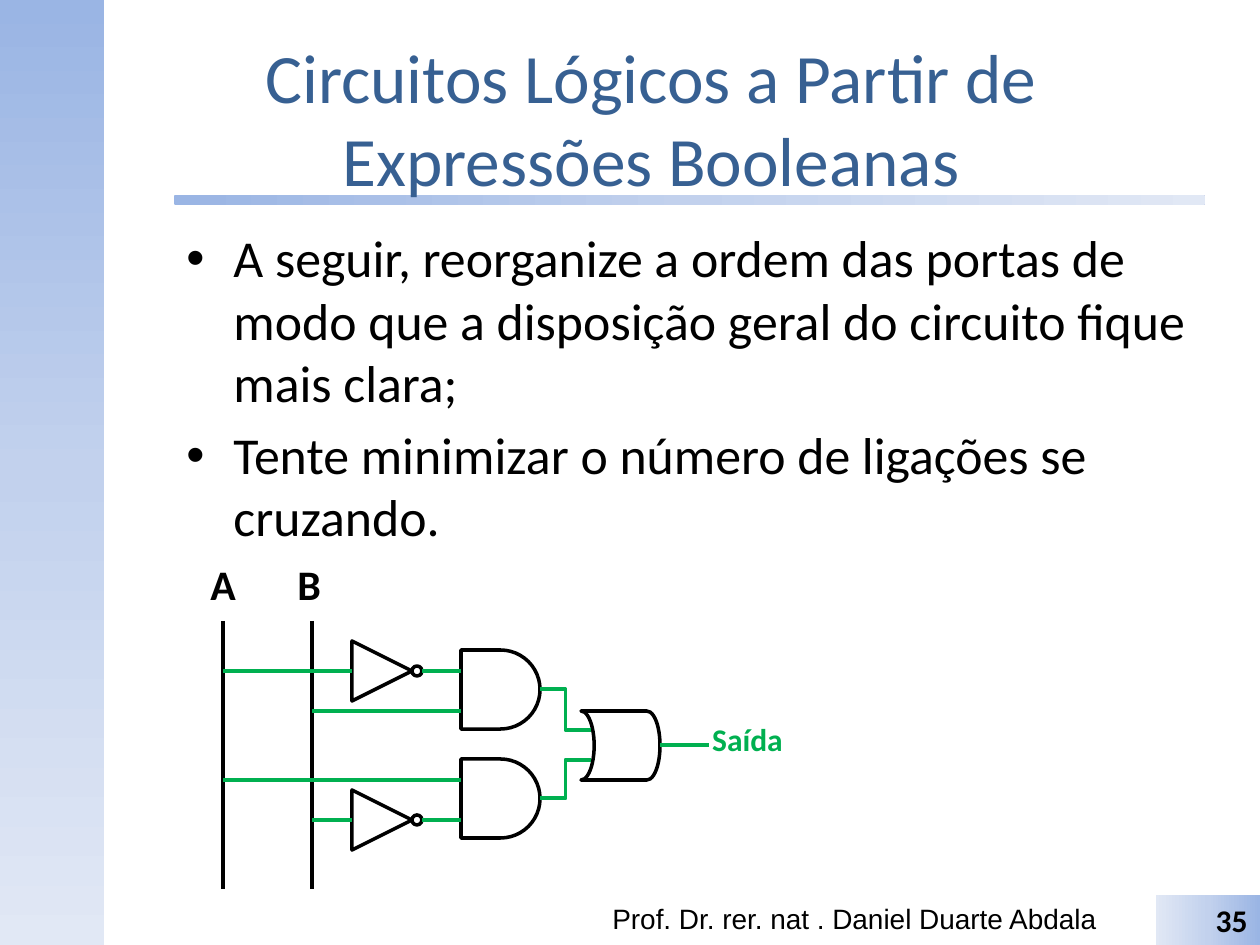
from dataclasses import dataclass

from lxml import etree
from pptx import Presentation
from pptx.dml.color import RGBColor
from pptx.enum.shapes import MSO_CONNECTOR, MSO_SHAPE
from pptx.enum.text import MSO_ANCHOR, PP_ALIGN
from pptx.oxml.ns import qn
from pptx.util import Pt

PX = 914400 / 126
STRAIGHT, ELBOW = MSO_CONNECTOR.STRAIGHT, MSO_CONNECTOR.ELBOW
RECT, ROUNDED, OVAL = MSO_SHAPE.RECTANGLE, MSO_SHAPE.ROUNDED_RECTANGLE, MSO_SHAPE.OVAL
AND_GATE = MSO_SHAPE.FLOWCHART_DELAY
OR_GATE = MSO_SHAPE.FLOWCHART_STORED_DATA
TRIANGLE = MSO_SHAPE.FLOWCHART_MERGE
LEFT, CENTER, RIGHT = PP_ALIGN.LEFT, PP_ALIGN.CENTER, PP_ALIGN.RIGHT
TOP, MIDDLE = MSO_ANCHOR.TOP, MSO_ANCHOR.MIDDLE


@dataclass(frozen=True)
class Theme:
    ink: str = "000000"
    title: str = "376092"
    signal: str = "00B050"
    gradient: tuple = ((0, "9AB5E4"), (50, "C2D1ED"), (100, "E1E8F5"))
    font: str = "Calibri"
    footer_font: str = "Arial"
    title_size: float = 39.6
    body_size: float = 29.6
    input_size: int = 24
    label_size: int = 18
    footer_size: int = 16
    gate_line: int = 2
    wire_line: float = 2.25


def emu(*lengths):
    return [round(length * PX) for length in lengths]


class CircuitSlide:
    def __init__(self, slide, theme):
        self.slide = slide
        self.theme = theme

    def gradient_box(self, kind, box, angle):
        """Angle runs counter-clockwise, as python-pptx counts it."""
        shape = self.slide.shapes.add_shape(kind, *emu(*box))
        shape.shadow.inherit = False
        shape.line.fill.background()
        shape.fill.gradient()
        shape.fill.gradient_angle = angle
        stops = next(shape.element.iter(qn("a:gsLst")))
        for stop in list(stops):
            stops.remove(stop)
        for position, color in self.theme.gradient:
            stop = etree.SubElement(stops, qn("a:gs"), pos=str(position * 1000))
            etree.SubElement(stop, qn("a:srgbClr"), val=color)
        return shape

    def fill_text(self, frame, lines, size, color=None, font=None, bold=False,
                  align=LEFT, anchor=TOP, wrap=True):
        frame.word_wrap = wrap
        frame.vertical_anchor = anchor
        for index, line in enumerate(lines):
            paragraph = frame.add_paragraph() if index else frame.paragraphs[0]
            paragraph.text = line
            paragraph.alignment = align
            paragraph.font.size = Pt(size)
            paragraph.font.name = font or self.theme.font
            paragraph.font.bold = bold
            paragraph.font.color.rgb = RGBColor.from_string(color or self.theme.ink)

    def text(self, box, line, size, **style):
        frame = self.slide.shapes.add_textbox(*emu(*box)).text_frame
        self.fill_text(frame, [line], size, **style)

    def bullets(self, box, lines, size, indent):
        frame = self.slide.shapes.add_textbox(*emu(*box)).text_frame
        self.fill_text(frame, lines, size)
        hang = emu(indent)[0]
        for paragraph in frame.paragraphs:
            paragraph.space_before = Pt(round(size * 0.2, 1))
            properties = paragraph._p.get_or_add_pPr()
            properties.set("marL", str(hang))
            properties.set("indent", str(-hang))
            bullet_font = etree.Element(qn("a:buFont"), typeface="Arial")
            bullet = etree.Element(qn("a:buChar"), char="•")
            run_style = properties.find(qn("a:defRPr"))
            run_style.addprevious(bullet_font)
            run_style.addprevious(bullet)

    def gate(self, kind, box, rotation=0, parent=None):
        shape = (parent or self.slide).shapes.add_shape(kind, *emu(*box))
        shape.shadow.inherit = False
        shape.rotation = rotation
        shape.fill.background()
        shape.line.color.rgb = RGBColor.from_string(self.theme.ink)
        shape.line.width = Pt(self.theme.gate_line)

    def inverter(self, left, middle, side, bubble):
        group = self.slide.shapes.add_group_shape()
        self.gate(TRIANGLE, (left, middle - side / 2, side, side), 270, group)
        self.gate(OVAL, (left + side, middle - bubble / 2, bubble, bubble), 0, group)

    def wire(self, start, end, color=None, kind=STRAIGHT):
        wire = self.slide.shapes.add_connector(kind, *emu(*start, *end))
        wire.line.color.rgb = RGBColor.from_string(color or self.theme.signal)
        wire.line.width = Pt(self.theme.wire_line)
        etree.SubElement(wire._element.spPr, qn("a:effectLst"))


def draw_frame(page):
    theme = page.theme
    page.gradient_box(RECT, (0, 0, 104, 945), 270)
    page.gradient_box(ROUNDED, (174, 195, 1031, 10), 0)
    page.text((105, 38, 1092, 158), "Circuitos Lógicos a Partir de Expressões Booleanas",
              theme.title_size, color=theme.title, align=CENTER, anchor=MIDDLE)
    page.text((600, 895, 528, 50), "Prof. Dr. rer. nat . Daniel Duarte Abdala",
              theme.footer_size, font=theme.footer_font)
    number = page.gradient_box(RECT, (1156, 895, 104, 50), 180)
    page.fill_text(number.text_frame, ["35"], theme.label_size, bold=True, align=RIGHT)
    page.bullets((174, 220, 1052, 331), [
        "A seguir, reorganize a ordem das portas de modo que a disposição geral "
        "do circuito fique mais clara;",
        "Tente minimizar o número de ligações se cruzando.",
    ], theme.body_size, 47)


def draw_circuit(page):
    theme = page.theme
    input_a, input_b = 223, 312
    not_left, not_side, bubble = 352, 60, 10
    not_right = not_left + not_side + bubble
    and_left, and_side = 461, 79
    and_right = and_left + and_side
    or_left, or_top, or_width, or_height = 581, 711, 79, 69
    or_right, or_middle, or_inlet = or_left + or_width, 745, 591

    for name, x, label_left in (("A", input_a, 198), ("B", input_b, 285)):
        page.wire((x, 621), (x, 889), theme.ink)
        page.text((label_left, 552, 52, 63), name, theme.input_size, bold=True, wrap=False)

    page.gate(OR_GATE, (or_left, or_top, or_width, or_height), 180)

    # Each branch: AND top, inverted input and its y, direct input and its y, OR inlet y
    branches = (
        (650, input_a, 671, input_b, 711, 730),
        (759, input_b, 820, input_a, 780, 760),
    )
    for and_top, inverted, not_y, direct, direct_y, inlet_y in branches:
        page.gate(AND_GATE, (and_left, and_top, and_side, and_side))
        page.inverter(not_left, not_y, not_side, bubble)
        page.wire((inverted, not_y), (not_left, not_y))
        page.wire((not_right, not_y), (and_left, not_y))
        page.wire((direct, direct_y), (and_left, direct_y))
        page.wire((and_right, and_top + and_side / 2), (or_inlet, inlet_y), kind=ELBOW)

    page.wire((or_right, or_middle), (709, or_middle))
    page.text((699, 714, 97, 50), "Saída", theme.label_size,
              color=theme.signal, bold=True, align=CENTER)


def main():
    presentation = Presentation()
    presentation.slide_width, presentation.slide_height = emu(1260, 945)
    blank = presentation.slide_layouts[6]
    page = CircuitSlide(presentation.slides.add_slide(blank), Theme())
    draw_frame(page)
    draw_circuit(page)
    presentation.save("out.pptx")


if __name__ == "__main__":
    main()
